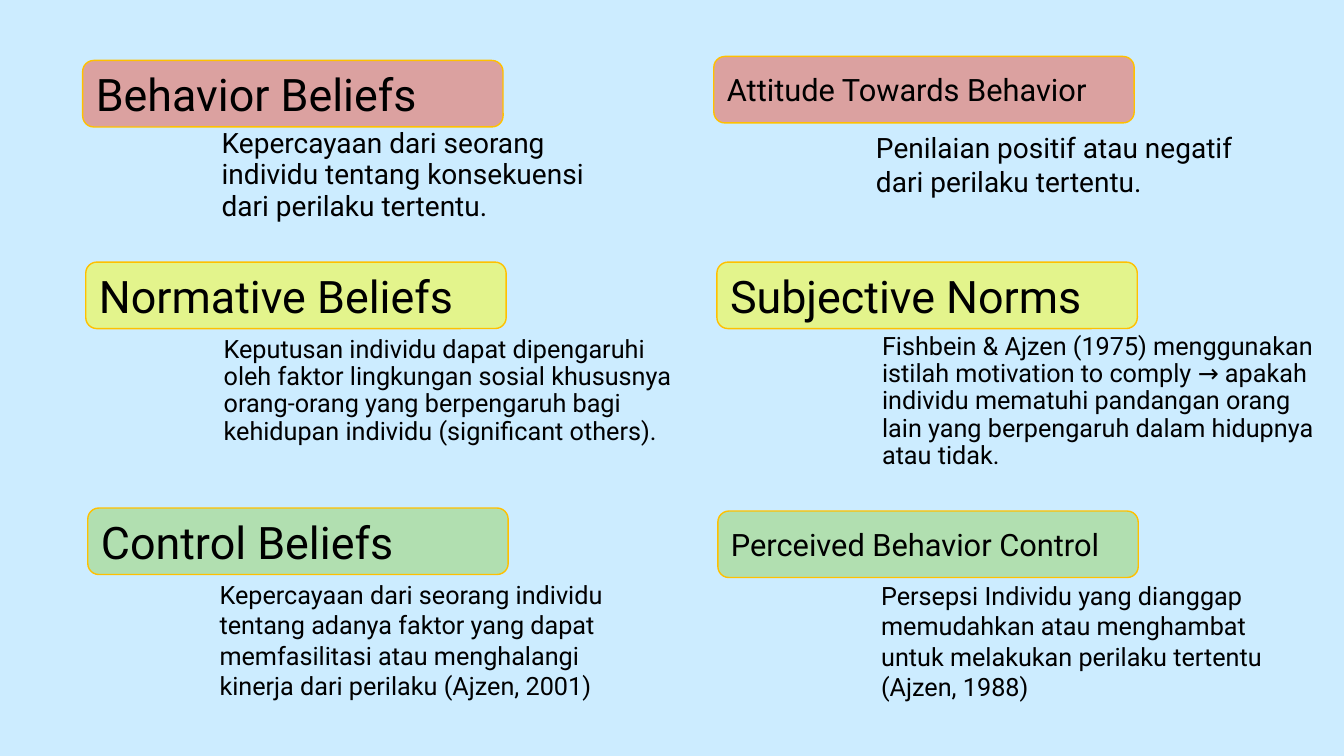
from lxml.etree import SubElement
from pptx import Presentation
from pptx.dml.color import RGBColor
from pptx.enum.shapes import MSO_SHAPE
from pptx.enum.text import MSO_ANCHOR, PP_ALIGN
from pptx.oxml.ns import qn
from pptx.util import Inches, Pt

COLORS = {
    "background": "CCECFF",
    "border": "FFC000",
    "text": "000000",
    "attitude": "EE462D",
    "norm": "FFFF00",
    "control": "92D050",
}
HEADING_SIZE = (31.28, 8.8)

HEADINGS = [
    ("Behavior Beliefs", "attitude", 6.15, 8, 32),
    ("Attitude Towards Behavior", "attitude", 53.11, 7.47, 22),
    ("Normative Beliefs", "norm", 6.38, 34.67, 32),
    ("Subjective Norms", "norm", 53.34, 34.67, 32),
    ("Control Beliefs", "control", 6.53, 67.2, 32),
    ("Perceived Behavior Control", "control", 53.41, 67.6, 22),
]

DEFINITIONS = [
    ("Kepercayaan dari seorang individu tentang konsekuensi dari perilaku tertentu.",
     (12.08, 16.27, 35.48, 15.07), dict(size=20, indent=0.49, spacing=0.94, right=0.35)),
    ("Penilaian positif atau negatif dari perilaku tertentu.",
     (64.44, 16.67, 31.28, 10.27), dict(size=20)),
    ("Keputusan individu dapat dipengaruhi oleh faktor lingkungan sosial khususnya "
     "orang-orang yang berpengaruh bagi kehidupan individu (significant others).",
     (11.4, 43.87, 39.61, 19.47), dict(indent=0.6, spacing=0.9)),
    ("Fishbein & Ajzen (1975) menggunakan istilah motivation to comply → apakah "
     "individu mematuhi pandangan orang lain yang berpengaruh dalam hidupnya atau tidak.",
     (60.39, 43.47, 39.61, 19.47), dict(indent=0.6, spacing=0.9)),
    ("Kepercayaan dari seorang individu tentang adanya faktor yang dapat memfasilitasi "
     "atau menghalangi kinerja dari perilaku (Ajzen, 2001)",
     (15.6, 76, 33.61, 17.47), dict()),
    ("Persepsi Individu yang dianggap memudahkan atau menghambat untuk melakukan "
     "perilaku tertentu (Ajzen, 1988)",
     (60.32, 76.13, 37.36, 17.47), dict(indent=0.6)),
]


class Deck:
    font = "Roboto"

    def __init__(self):
        self.prs = Presentation()
        self.prs.slide_width = Inches(13.33)
        self.prs.slide_height = Inches(7.5)

    def color(self, name):
        return RGBColor.from_string(COLORS[name])

    def add_slide(self):
        self.s = self.prs.slides.add_slide(self.prs.slide_layouts[6])
        fill = self.s.background.fill
        fill.solid()
        fill.fore_color.rgb = self.color("background")

    def box(self, x, y, w, h):
        width, height = self.prs.slide_width, self.prs.slide_height
        return [int(share * side / 100) for share, side in
                ((x, width), (y, height), (w, width), (h, height))]

    def add_text(self, tf, text, size):
        tf.word_wrap = True
        p = tf.paragraphs[0]
        p.alignment = PP_ALIGN.LEFT
        r = p.add_run()
        r.text = text
        r.font.name = self.font
        r.font.size = Pt(size)
        r.font.color.rgb = self.color("text")
        return p

    def heading(self, text, fill, x, y, size):
        sp = self.s.shapes.add_shape(MSO_SHAPE.ROUNDED_RECTANGLE,
                                     *self.box(x, y, *HEADING_SIZE))
        sp.shadow.inherit = False
        sp.fill.solid()
        sp.fill.fore_color.rgb = self.color(fill)
        rgb = sp.element.spPr.find(qn("a:solidFill")).find(qn("a:srgbClr"))
        SubElement(rgb, qn("a:alpha"), val="45000")
        sp.line.color.rgb = self.color("border")
        sp.line.width = Pt(1)
        sp.text_frame.vertical_anchor = MSO_ANCHOR.MIDDLE
        self.add_text(sp.text_frame, text, size)

    def definition(self, text, area, size=18, indent=0, spacing=1.0, right=0.1):
        tf = self.s.shapes.add_textbox(*self.box(*area)).text_frame
        tf.margin_right = Inches(right)
        p = self.add_text(tf, text, size)
        p.line_spacing = spacing
        p._p.get_or_add_pPr().set("marL", str(Inches(indent)))


def main():
    deck = Deck()
    deck.add_slide()
    for heading in HEADINGS:
        deck.heading(*heading)
    for text, area, style in DEFINITIONS:
        deck.definition(text, area, **style)
    deck.prs.save("out.pptx")


if __name__ == "__main__":
    main()
